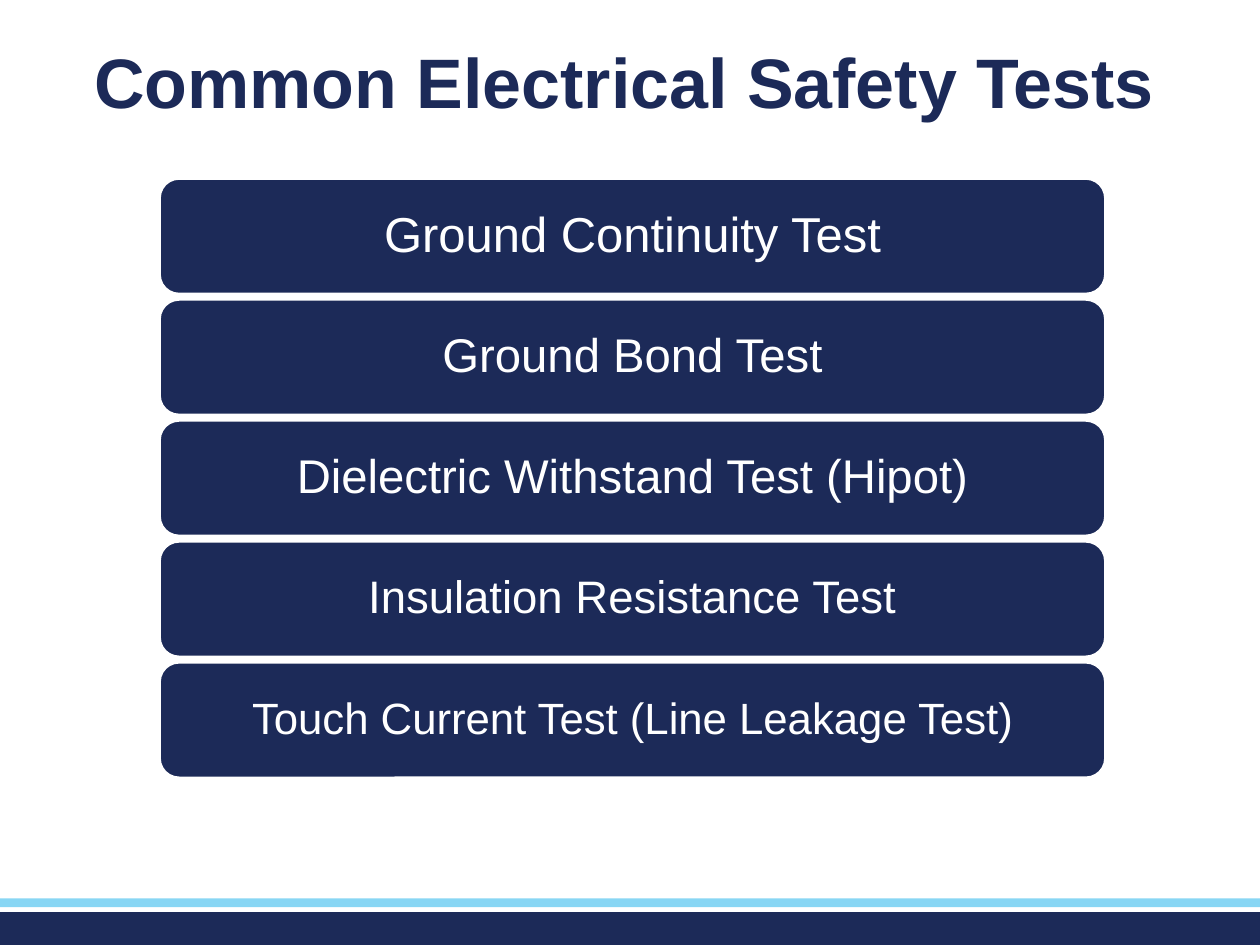
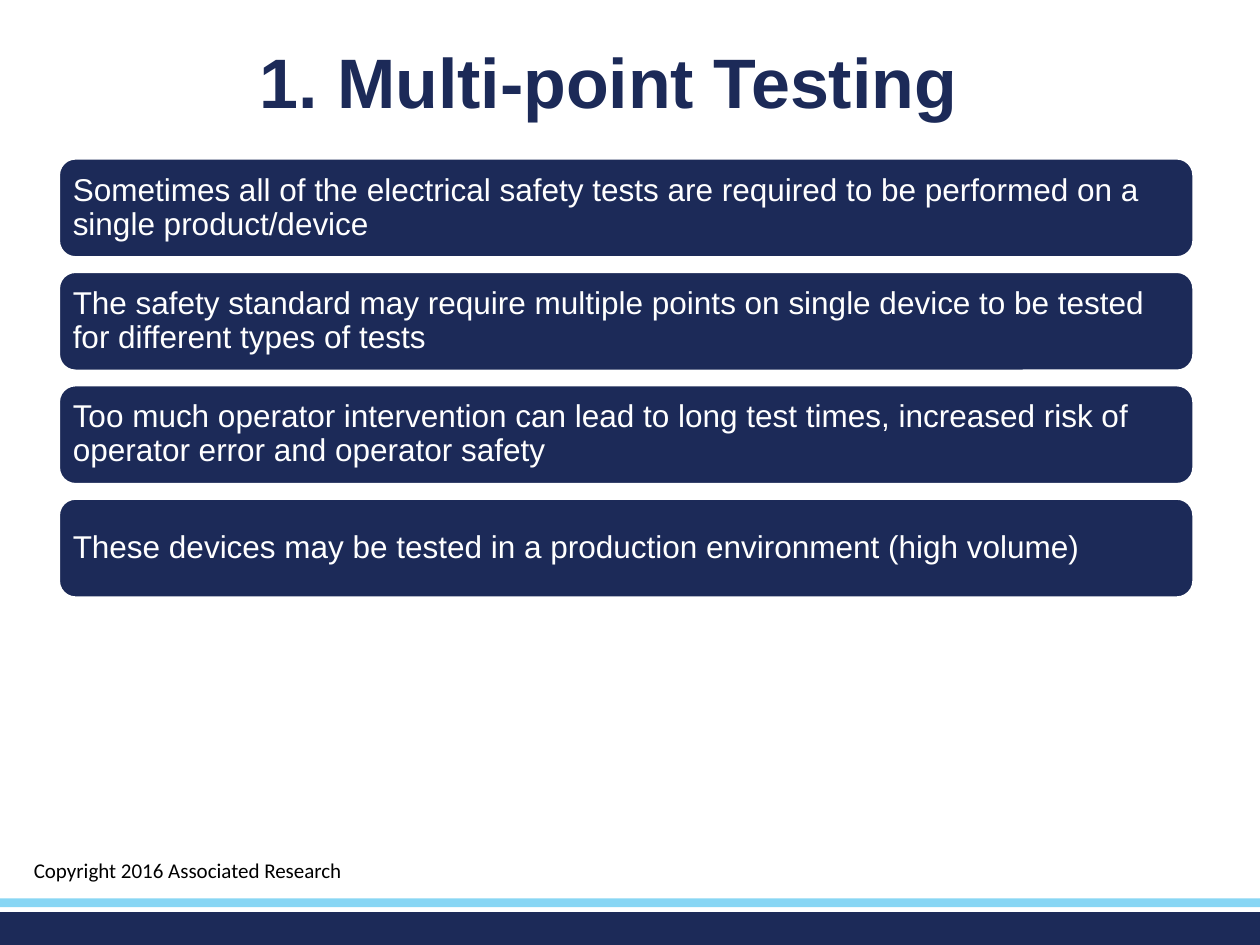
import pptx
import pptx.dml.color
import pptx.enum.shapes
import pptx.enum.text
import pptx.util

Inches = pptx.util.Inches
Pt = pptx.util.Pt
ALIGN = pptx.enum.text.PP_ALIGN
ANCHOR = pptx.enum.text.MSO_ANCHOR
SHAPE = pptx.enum.shapes.MSO_SHAPE

COLORS = {"navy": "1C2A58", "sky": "88D6F4", "white": "FFFFFF", "black": "000000"}
TITLE_ONLY = 5

COMMON_TESTS = [
    ("Ground Continuity Test", 28),
    ("Ground Bond Test", 27),
    ("Dielectric Withstand Test (Hipot)", 27),
    ("Insulation Resistance Test", 26),
    ("Touch Current Test (Line Leakage Test)", 25),
]
MULTI_POINT_REASONS = [
    ("Sometimes all of the electrical safety tests are required to be performed "
     "on a single product/device", 18),
    ("The safety standard may require multiple points on single device to be "
     "tested for different types of tests", 18),
    ("Too much operator intervention can lead to long test times, increased "
     "risk of operator error and operator safety", 18),
    ("These devices may be tested in a production environment (high volume)", 18),
]


def rgb(name):
    return pptx.dml.color.RGBColor.from_string(COLORS[name])


def set_text(shape, text, size, color, font="Arial", bold=False,
             align=ALIGN.LEFT, anchor=ANCHOR.TOP, spacing=0.9, margins=(0.1, 0.05)):
    """Fill a shape with one paragraph; margins are (side, top and bottom)."""
    frame = shape.text_frame
    frame.word_wrap = True
    frame.auto_size = pptx.enum.text.MSO_AUTO_SIZE.NONE
    frame.vertical_anchor = anchor
    frame.margin_left = frame.margin_right = Inches(margins[0])
    frame.margin_top = frame.margin_bottom = Inches(margins[1])
    paragraph = frame.paragraphs[0]
    paragraph.alignment = align
    paragraph.line_spacing = spacing
    run = paragraph.add_run()
    run.text = text
    run.font.name = font
    run.font.size = Pt(size)
    run.font.bold = bold
    run.font.color.rgb = rgb(color)


def add_box(slide, kind, left, top, width, height, fill, line=None):
    box = slide.shapes.add_shape(
        kind, Inches(left), Inches(top), Inches(width), Inches(height))
    box.shadow.inherit = False
    box.fill.solid()
    box.fill.fore_color.rgb = rgb(fill)
    if line:
        box.line.color.rgb = rgb(line)
        box.line.width = Pt(1)
    else:
        box.line.fill.background()
    return box


def add_bands_to_layout(slide):
    """Draw the bottom bands and move them to the layout that all slides share."""
    for top, height, fill in [(7.24, 0.26, "navy"), (7.13, 0.07, "sky")]:
        band = add_box(slide, SHAPE.RECTANGLE, 0, top, 10, height, fill)
        slide.slide_layout.shapes.element.append(band.element)


def add_titled_slide(deck, title, title_width):
    slide = deck.slides.add_slide(deck.slide_layouts[TITLE_ONLY])
    heading = slide.shapes.title
    heading.left, heading.top = Inches(0.33), Inches(0.33)
    heading.width, heading.height = Inches(title_width), Inches(1.37)
    set_text(heading, title, 40, "navy", bold=True, align=ALIGN.CENTER)
    return slide


def add_bar_stack(slide, entries, left, top, width, height, pitch, **text_format):
    """Stack one rounded bar per (text, size) entry, a fixed pitch apart."""
    for row, (text, size) in enumerate(entries):
        bar = add_box(slide, SHAPE.ROUNDED_RECTANGLE, left, top + row * pitch,
                      width, height, "navy", line="white")
        set_text(bar, text, size, "white", anchor=ANCHOR.MIDDLE, **text_format)


def add_copyright(slide, text):
    notice = slide.shapes.add_textbox(
        Inches(0.17), Inches(6.76), Inches(3.17), Inches(0.4))
    set_text(notice, text, 12, "black", font="Calibri", spacing=1.0)


def main():
    deck = pptx.Presentation()
    deck.slide_width, deck.slide_height = Inches(10), Inches(7.5)

    tests = add_titled_slide(deck, "Common Electrical Safety Tests", 9.25)
    add_bands_to_layout(tests)
    add_bar_stack(tests, COMMON_TESTS, 1.27, 1.42, 7.5, 0.91, 0.96,
                  align=ALIGN.CENTER, margins=(0.11, 0.06))

    multi_point = add_titled_slide(deck, "1. Multi-point Testing", 9)
    add_bar_stack(multi_point, MULTI_POINT_REASONS, 0.47, 1.26, 9, 0.78, 0.9,
                  margins=(0.07, 0.07))
    add_copyright(multi_point, "Copyright 2016 Associated Research")

    deck.save("out.pptx")


if __name__ == "__main__":
    main()
